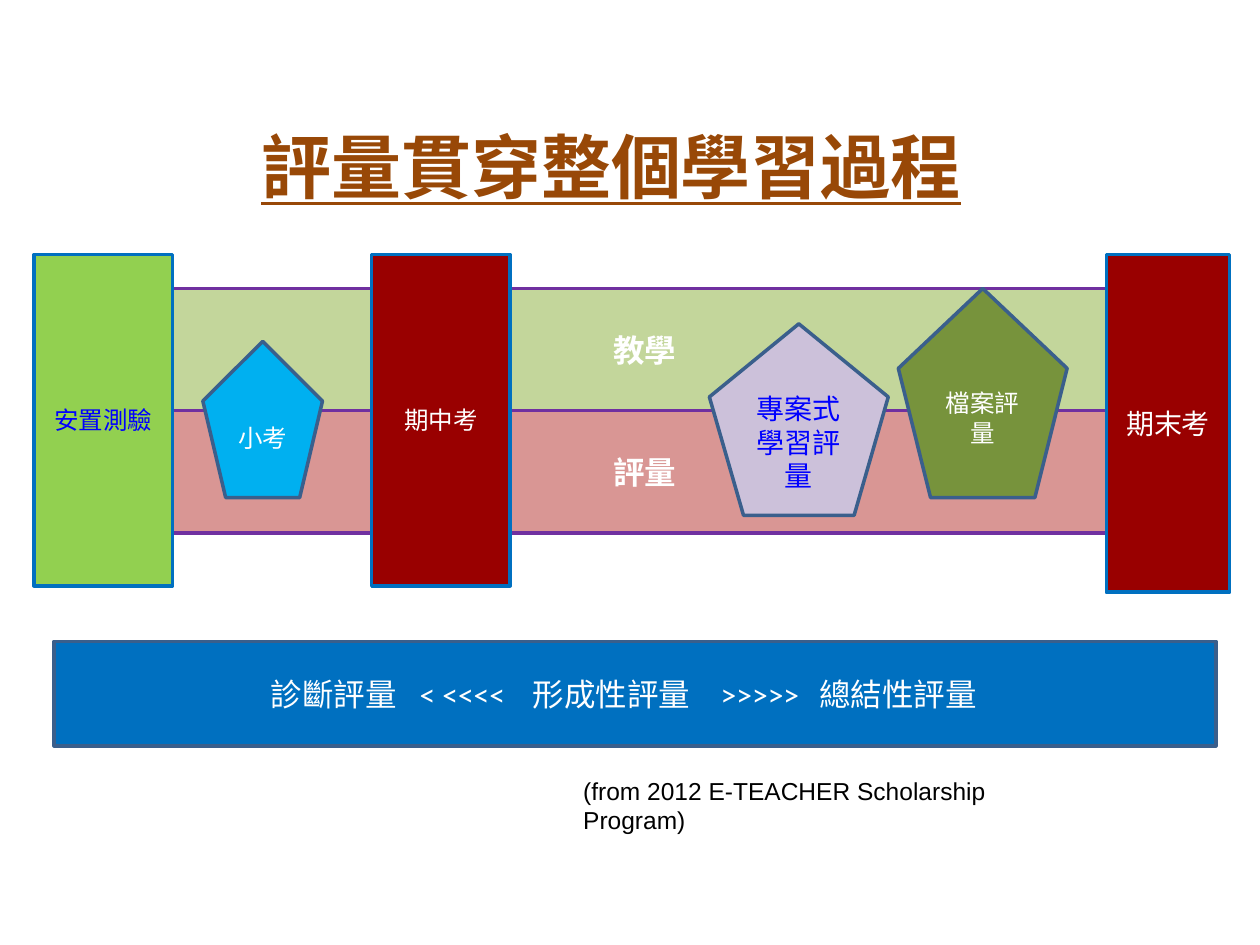
from lxml import etree
from pptx import Presentation
from pptx.dml.color import RGBColor
from pptx.enum.shapes import MSO_SHAPE
from pptx.enum.text import MSO_ANCHOR, PP_ALIGN
from pptx.oxml.ns import qn
from pptx.util import Inches, Pt

RECT, PENTAGON = MSO_SHAPE.RECTANGLE, MSO_SHAPE.REGULAR_PENTAGON
CENTER, LEFT, MIDDLE = PP_ALIGN.CENTER, PP_ALIGN.LEFT, MSO_ANCHOR.MIDDLE

# Content
TITLE = "評量貫穿整個學習過程"
SOURCE = "(from 2012 E-TEACHER Scholarship Program)"
WHITE, BLUE, NAVY = "FFFFFF", "0000FF", "3A5F8C"
BANDS = [("教學", "C3D69B"), ("評量", "D99694")]
# label, left, width, height, fill, text colour, size
EXAMS = [
    ("安置測驗", 0.27, 1.10, 2.63, "92D050", BLUE, 14),
    ("期中考", 2.95, 1.10, 2.63, "990000", WHITE, 14),
    ("期末考", 8.78, 0.98, 2.68, "990000", WHITE, 16),
]
# label, left, top, width, height, fill, text colour, size
TASKS = [
    ("小考", 1.61, 2.71, 0.95, 1.24, "00B0F0", WHITE, 14),
    ("專案式學習評量", 5.63, 2.57, 1.42, 1.52, "CCC1DA", BLUE, 16),
    ("檔案評量", 7.13, 2.29, 1.34, 1.66, "77933C", WHITE, 14),
]
# text, distance from the first stage
STAGES = [("診斷評量", 0), ("< <<<<", 1.18), ("形成性評量", 2.08),
          (">>>>>", 3.57), ("總結性評量", 4.35)]
BAND_TOP, BAND_H, EXAM_TOP = 2.29, 0.97, 2.02


def rgb(color):
    return RGBColor.from_string(color)


def box(lengths):
    return [Inches(v) for v in lengths]


def style(p, size, color, font="Calibri", bold=False, align=CENTER):
    p.alignment = align
    for r in p.runs:
        r.font.name, r.font.size, r.font.bold = font, Pt(size), bold
        r.font.color.rgb = rgb(color)


def block(kind, place, fill, line, text, size, color, bold=False):
    s = shapes.add_shape(kind, *box(place))
    s.shadow.inherit = False
    s.fill.solid()
    s.fill.fore_color.rgb = rgb(fill)
    s.line.color.rgb = rgb(line)
    s.line.width = Pt(2)
    tf = s.text_frame
    tf.word_wrap = True
    tf.vertical_anchor = MIDDLE
    tf.text = text
    style(tf.paragraphs[0], size, color, bold=bold)
    return s


prs = Presentation()
prs.slide_width, prs.slide_height = box((10, 7.5))
slide = prs.slides.add_slide(prs.slide_layouts[5])
shapes = slide.shapes

# Title
title = shapes.title
title.left, title.top, title.width, title.height = box((0.35, 0.84, 9, 0.94))
title.text_frame.text = TITLE
title.text_frame.vertical_anchor = MIDDLE
p = title.text_frame.paragraphs[0]
style(p, 40, "984807", "Noto Sans CJK SC", True)
p.runs[0].font.underline = True

# Teaching and assessment bands
for i, (text, fill) in enumerate(BANDS):
    block(RECT, (1.14, BAND_TOP + i * BAND_H, 7.95, BAND_H), fill, "7030A0",
          text, 18, WHITE, True)

# Exams standing across the bands
for text, left, width, height, fill, color, size in EXAMS:
    block(RECT, (left, EXAM_TOP, width, height), fill, "0070C0", text, size, color)

# Tasks along the way
for text, *place, fill, color, size in TASKS:
    block(PENTAGON, place, fill, NAVY, text, size, color)

# Stage bar, spaced with tab stops
bar = block(RECT, (0.43, 5.09, 9.22, 0.83), "0070C0", NAVY,
            "\t".join(text for text, _ in STAGES), 18, WHITE)
bar.text_frame.margin_left = Inches(1.72)
p = bar.text_frame.paragraphs[0]
p.alignment = LEFT
tabs = etree.SubElement(p._p.get_or_add_pPr(), qn("a:tabLst"))
for _, offset in STAGES[1:]:
    etree.SubElement(tabs, qn("a:tab"), pos=str(Inches(offset)), algn="l")

# Source line
tf = shapes.add_textbox(*box((4.53, 6.11, 4.25, 0.34))).text_frame
tf.word_wrap = True
tf.text = SOURCE
style(tf.paragraphs[0], 14, "000000", "Arial", align=LEFT)

prs.save("out.pptx")
